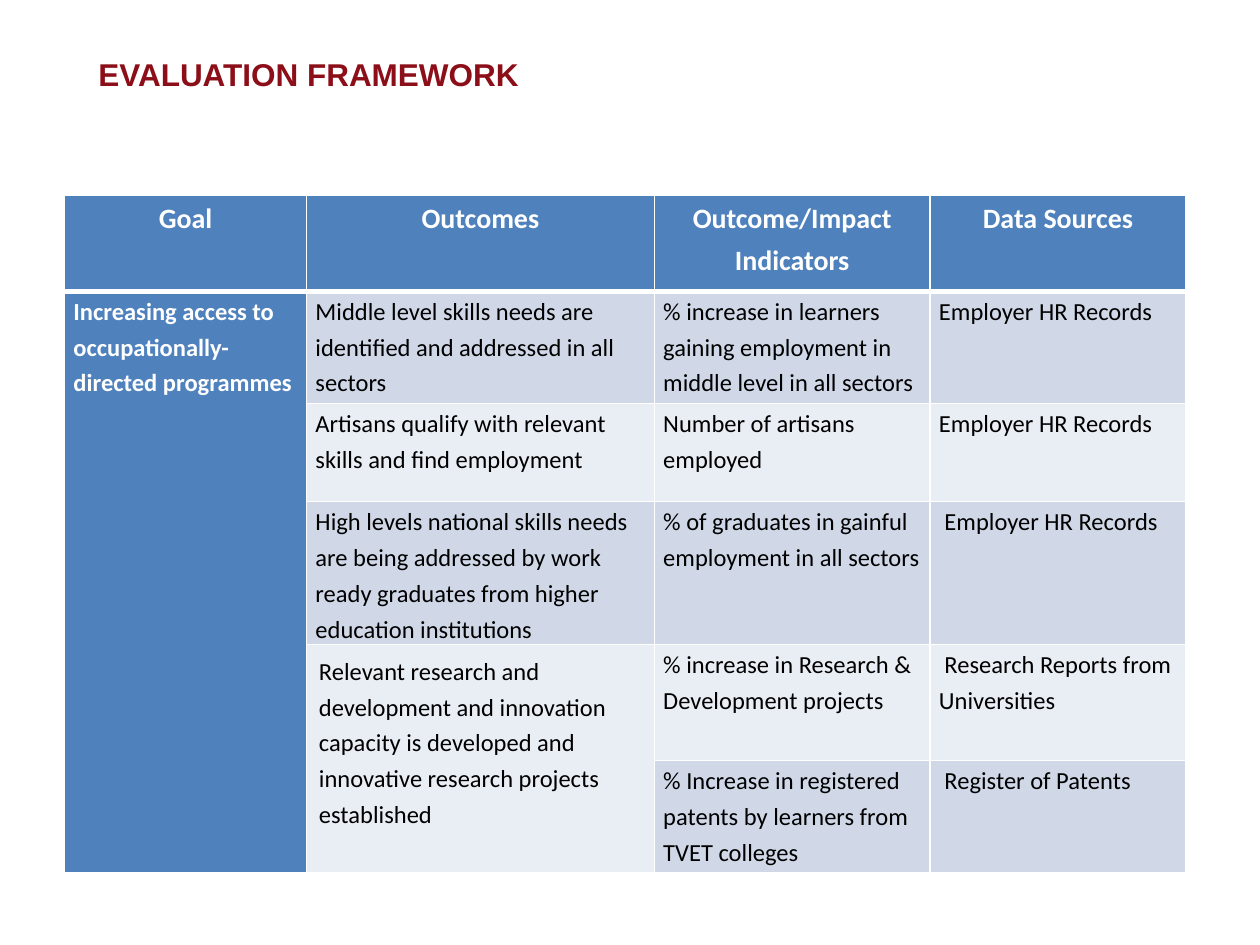
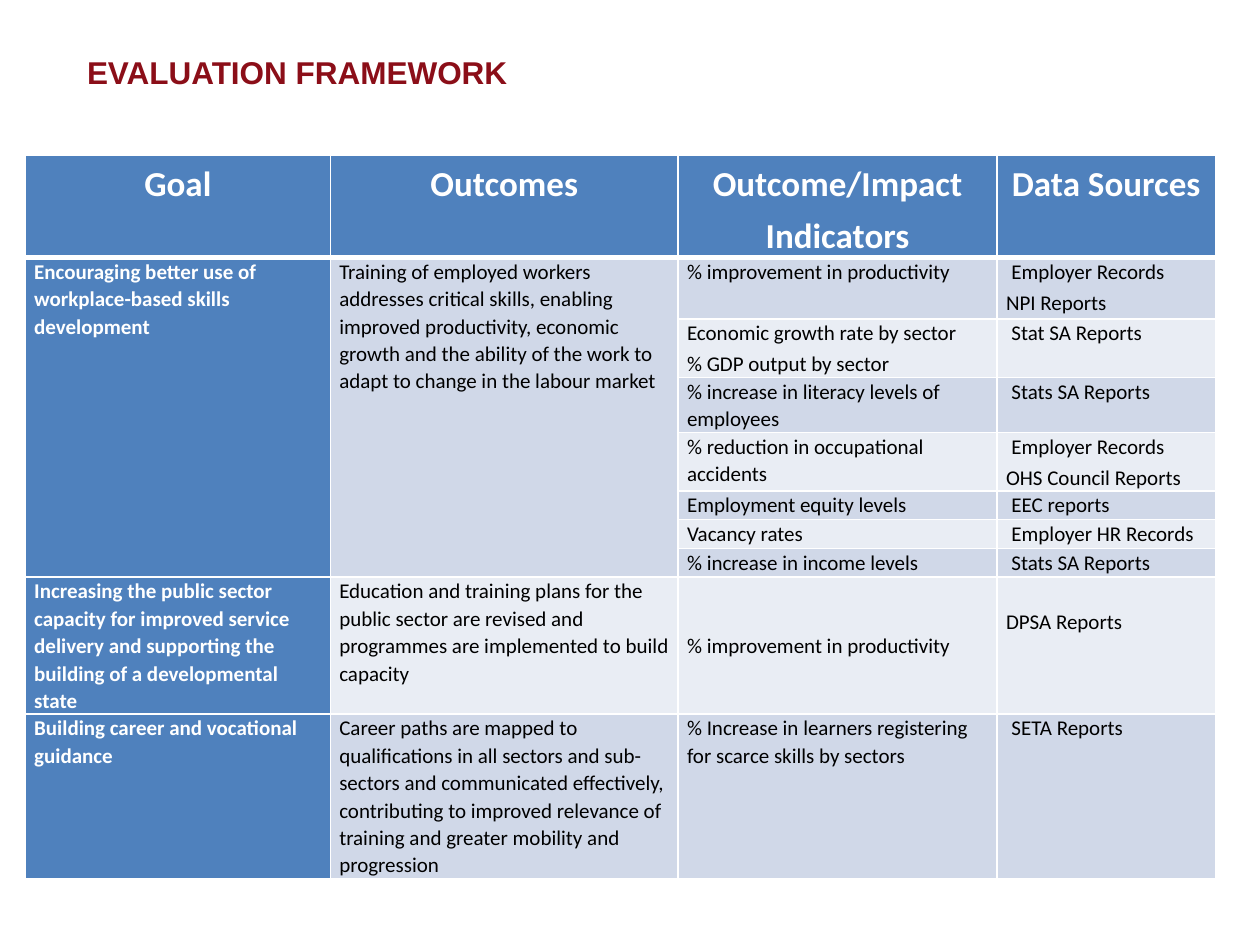
"""Build two evaluation framework slides, each with a title and a table."""
from lxml.etree import SubElement
from pptx import Presentation
from pptx.dml.color import RGBColor
from pptx.enum.text import MSO_ANCHOR, PP_ALIGN
from pptx.oxml.ns import qn
from pptx.util import Cm, Pt

MAROON = RGBColor(0x8B, 0x0E, 0x18)
BLUE = RGBColor(0x4F, 0x81, 0xBD)
WHITE = RGBColor(0xFF, 0xFF, 0xFF)
BLACK = RGBColor(0x00, 0x00, 0x00)
BANDS = (RGBColor(0xE9, 0xED, 0xF4), RGBColor(0xD0, 0xD8, 0xE8))

TITLE = "EVALUATION FRAMEWORK"
TITLE_FONT = {"name": "Arial", "size": Pt(18), "bold": True}
HEADINGS = ("Goal", "Outcomes", "Outcome/Impact Indicators", "Data Sources")
SOURCES_COLUMN = HEADINGS.index("Data Sources")
HEADING_MARGINS = {"margin_left": Cm(0.15), "margin_right": Cm(0.15),
                   "margin_top": 0, "margin_bottom": 0}
BODY_MARGINS = {"margin_left": Cm(0.18), "margin_right": Cm(0.18),
                "margin_top": 0, "margin_bottom": 0}

ACCESS = {
    "title_box": (1.73, 0.91, 16.76, 1.14),
    "corner": (1.3, 3.94),
    "widths": (4.88, 7.01, 5.56, 5.16),
    "heights": (1.93, 2.26, 1.98, 2.88, 2.34, 2.26),
    "heading_size": 16, "body_size": 14, "spacing": 1.2,
    "indented_rows": (3, 4, 5),
    "cell_formats": {(4, 1): {"margin_left": Cm(0.25), "margin_right": Cm(0.25),
                              "margin_top": Cm(0.13), "margin_bottom": Cm(0.13)}},
    "rows": [
        ("Increasing access to occupationally-directed programmes",
         "Middle level skills needs are identified and addressed in all sectors",
         "% increase in learners gaining employment in middle level in all sectors",
         "Employer HR Records"),
        (None, "Artisans qualify with relevant skills and find employment",
         "Number of artisans employed", "Employer HR Records"),
        (None, "High levels national skills needs are being addressed by work ready "
         "graduates from higher education institutions",
         "% of graduates in gainful employment in all sectors", "Employer HR Records"),
        (None, "Relevant research and development and innovation capacity is developed "
         "and innovative research projects established",
         "% increase in Research & Development projects",
         "Research Reports from Universities"),
        (None, None, "% Increase in registered patents by learners from TVET colleges",
         "Register of Patents"),
    ],
}

WORKPLACE = {
    "title_box": (1.5, 0.79, 18.01, 1.32),
    "corner": (0.51, 3.12),
    "widths": (6.15, 7.01, 6.43, 4.4),
    "heights": (2.07, 1.24, 1.17, 1.11, 1.17, 0.58, 0.58, 0.58, 2.76, 3.3),
    "heading_size": 20, "body_size": 12, "spacing": 1.07,
    "indented_rows": (1, 2, 3, 4, 5, 6, 7, 9),
    "cell_formats": {(8, 2): {"vertical_anchor": MSO_ANCHOR.MIDDLE},
                     (8, 3): {"margin_top": Cm(0.62)}},
    "rows": [
        ("Encouraging better use of workplace-based skills development",
         "Training of employed workers addresses critical skills, enabling improved "
         "productivity, economic growth and the ability of the work to adapt to change "
         "in the labour market",
         "% improvement in productivity", "Employer Records\nNPI Reports"),
        (None, None, "Economic growth rate by sector\n% GDP output by sector",
         "Stat SA Reports"),
        (None, None, "% increase in literacy levels of employees", "Stats SA Reports"),
        (None, None, "% reduction in occupational accidents",
         "Employer Records\nOHS Council Reports"),
        (None, None, "Employment equity levels", "EEC reports"),
        (None, None, "Vacancy rates", "Employer HR Records"),
        (None, None, "% increase in income levels", "Stats SA Reports"),
        ("Increasing the public sector capacity for improved service delivery and "
         "supporting the building of a developmental state",
         "Education and training plans for the public sector are revised and "
         "programmes are implemented to build capacity",
         "% improvement in productivity", "DPSA Reports"),
        ("Building career and vocational guidance",
         "Career paths are mapped to qualifications in all sectors and sub-sectors and "
         "communicated effectively, contributing to improved relevance of training and "
         "greater mobility and progression",
         "% Increase in learners registering for scarce skills by sectors",
         "SETA Reports"),
    ],
}


def apply_format(target, values):
    """Set each named attribute of the target."""
    for name, value in values.items():
        setattr(target, name, value)


def add_title(slide, box):
    """Place and format the slide title."""
    title = slide.shapes.title
    apply_format(title, dict(zip(("left", "top", "width", "height"), map(Cm, box))))
    title.text_frame.text = TITLE
    title.text_frame.vertical_anchor = MSO_ANCHOR.MIDDLE
    heading = title.text_frame.paragraphs[0]
    heading.alignment = PP_ALIGN.LEFT
    apply_format(heading.font, TITLE_FONT)
    heading.font.color.rgb = MAROON


def set_borders(cell, row):
    """Draw white cell borders, thicker under the heading row."""
    thick_side = {0: "lnB", 1: "lnT"}.get(row)
    properties = cell._tc.get_or_add_tcPr()
    for side in ("lnL", "lnR", "lnT", "lnB"):
        width = Pt(3) if side == thick_side else Pt(1)
        line = SubElement(properties, qn(f"a:{side}"), w=str(width))
        fill = SubElement(line, qn("a:solidFill"))
        SubElement(fill, qn("a:srgbClr"), val=str(WHITE))


def write_cell(cell, text, row, column, content):
    """Write the paragraphs of one cell in its row and column style."""
    is_heading = row == 0
    emphasised = is_heading or column == 0
    size = content["heading_size" if is_heading else "body_size"]
    cell.text = text
    apply_format(cell, HEADING_MARGINS if is_heading else BODY_MARGINS)
    apply_format(cell, content["cell_formats"].get((row, column), {}))
    for index, paragraph in enumerate(cell.text_frame.paragraphs):
        apply_format(paragraph, {
            "alignment": PP_ALIGN.CENTER if is_heading else PP_ALIGN.LEFT,
            "line_spacing": 1.2 if is_heading else content["spacing"],
            "space_before": Pt(2 if index else 0),
        })
        if index == 0 and column == SOURCES_COLUMN and row in content["indented_rows"]:
            paragraph._p.get_or_add_pPr().set("indent", str(Cm(0.11)))
        apply_format(paragraph.font,
                     {"name": "Calibri", "size": Pt(size), "bold": emphasised})
        paragraph.font.color.rgb = WHITE if emphasised else BLACK


def merge_downwards(table, rows):
    """Merge each text cell with the empty cells below it."""
    for column in range(len(HEADINGS)):
        starts = [row for row, texts in enumerate(rows) if texts[column] is not None]
        for start, following in zip(starts, starts[1:] + [len(rows)]):
            if following - start > 1:
                table.cell(start, column).merge(table.cell(following - 1, column))


def add_framework_table(slide, content):
    """Add the table of goals, outcomes, indicators and sources."""
    rows = [HEADINGS, *content["rows"]]
    widths, heights = content["widths"], content["heights"]
    left, top = content["corner"]
    table = slide.shapes.add_table(len(rows), len(HEADINGS), Cm(left), Cm(top),
                                   Cm(sum(widths)), Cm(sum(heights))).table
    apply_format(table, {"first_row": False, "horz_banding": False})
    for grid_column, width in zip(table.columns, widths):
        grid_column.width = Cm(width)
    for grid_row, height in zip(table.rows, heights):
        grid_row.height = Cm(height)
    for row, texts in enumerate(rows):
        for column, text in enumerate(texts):
            cell = table.cell(row, column)
            set_borders(cell, row)
            cell.fill.solid()
            cell.fill.fore_color.rgb = BLUE if row == 0 or column == 0 else BANDS[row % 2]
            if text is not None:
                write_cell(cell, text, row, column, content)
    merge_downwards(table, rows)


def main():
    """Build and save the presentation."""
    presentation = Presentation()
    presentation.slide_width, presentation.slide_height = Cm(25.4), Cm(19.05)
    title_only = presentation.slide_layouts[5]
    for content in (ACCESS, WORKPLACE):
        slide = presentation.slides.add_slide(title_only)
        add_title(slide, content["title_box"])
        add_framework_table(slide, content)
    presentation.save("out.pptx")


if __name__ == "__main__":
    main()
